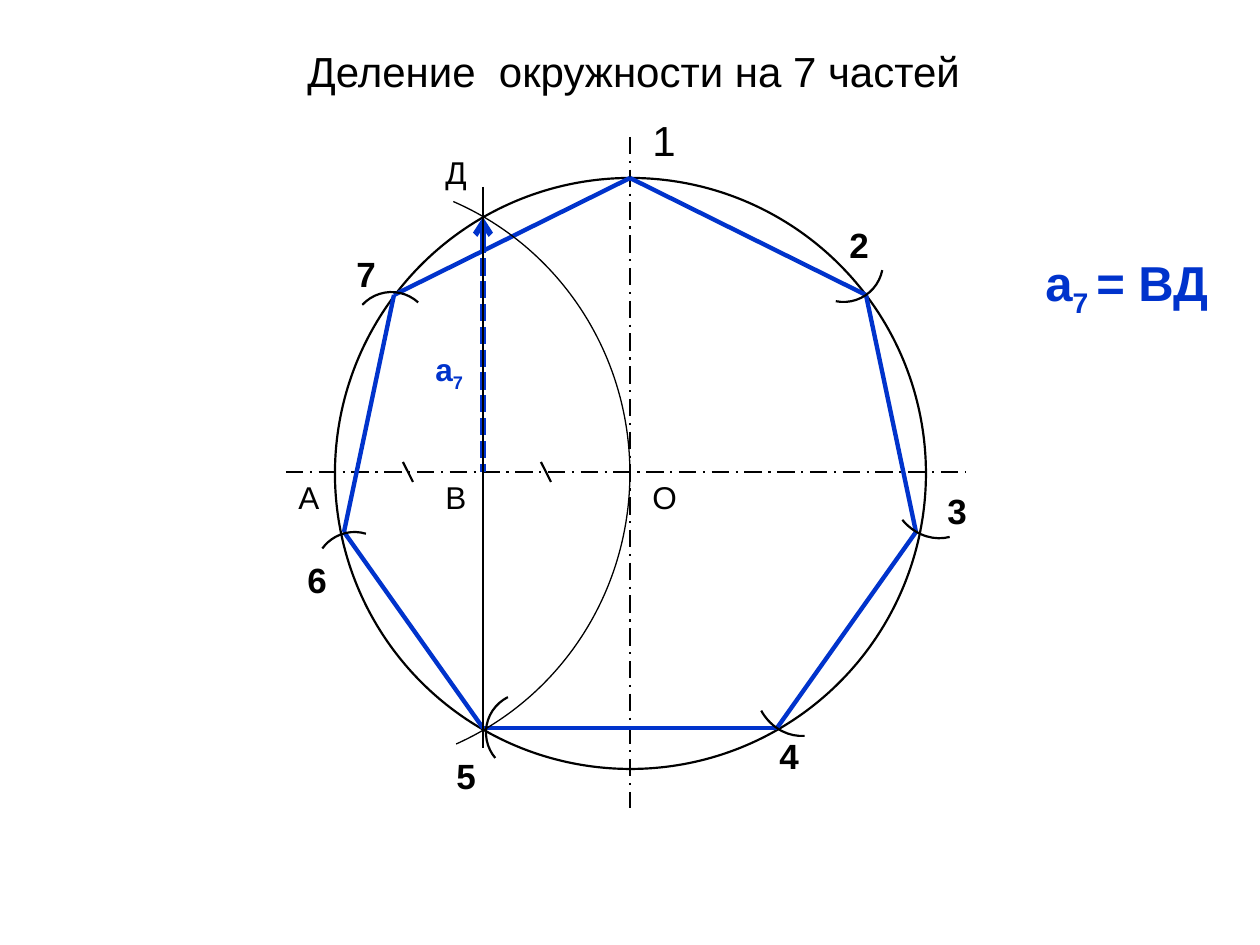
"""Draw the division of a circle into seven equal parts."""
from dataclasses import dataclass

import pptx
import pptx.util
from pptx.dml.color import RGBColor
from pptx.enum.dml import MSO_LINE
from pptx.enum.shapes import MSO_CONNECTOR, MSO_SHAPE
from pptx.enum.text import MSO_AUTO_SIZE
from pptx.oxml.ns import qn
from lxml import etree

BLACK = RGBColor(0x00, 0x00, 0x00)
BLUE = RGBColor(0x00, 0x33, 0xCC)
SCALE = 914400 / 126
FONT = "Arial"


@dataclass
class Label:
    text: str
    left: int
    top: int
    width: int
    height: int
    size: int = 20
    bold: bool = True
    color: RGBColor = BLACK
    sub: str = ""
    tail: str = ""
    wrap: bool = True


@dataclass
class Line:
    start: tuple[int, int]
    end: tuple[int, int]
    width: float = 1.25
    color: RGBColor = BLACK
    dash: MSO_LINE | None = None
    arrow: bool = False


@dataclass
class Arc:
    left: int
    top: int
    width: int
    height: int
    turn: float = 0
    start: float = 270
    end: float = 0
    line: float = 1.25


POINTS = [(630, 178), (866, 295), (916, 532), (777, 728),
          (483, 728), (344, 532), (394, 295)]

LABELS = [
    Label("Деление  окружности на 7 частей", 295, 39, 748, 63, 24, False),
    Label("1", 640, 108, 49, 63, 24, False),
    Label("2", 837, 217, 49, 55),
    Label("3", 935, 483, 39, 55),
    Label("4", 767, 728, 49, 55),
    Label("5", 444, 748, 49, 55),
    Label("6", 295, 552, 39, 55),
    Label("7", 344, 246, 49, 55),
    Label("О", 640, 472, 49, 50, 18, False),
    Label("А", 286, 472, 39, 50, 18, False),
    Label("В", 433, 472, 39, 50, 18, False),
    Label("Д", 433, 147, 59, 50, 18, False),
    Label("а", 1033, 246, 194, 72, 28, color=BLUE, sub="7 ", tail="= ВД", wrap=False),
    Label("а", 423, 344, 55, 50, 18, color=BLUE, sub="7", wrap=False),
]

AXES = [
    Line((630, 137), (630, 808), dash=MSO_LINE.LONG_DASH_DOT),
    Line((286, 472), (965, 472), dash=MSO_LINE.LONG_DASH_DOT),
]
TICKS = [Line((x, 462), (x + 10, 482)) for x in (403, 541)]
RADIUS = Line((483, 217), (483, 472), 3.25, BLUE, MSO_LINE.SQUARE_DOT, True)
SIDES = [Line(a, b, 2.5, BLUE) for a, b in zip(POINTS, POINTS[1:] + POINTS[:1])]
CHORD = Line((483, 187), (483, 748), 0.75)

ARCS = [
    Arc(804, 223, 79, 79, 101.2),
    Arc(893, 447, 84, 93, 141.1, 290.33),
    Arc(756, 644, 84, 93, 151.3, 290.33),
    Arc(486, 693, 79, 79, 243.6, 256.25),
    Arc(315, 532, 79, 79, 286.9, 288.68),
    Arc(352, 292, 79, 79, 312.5),
    Arc(49, 178, 581, 591, 0, 292.73, 66.67, 0.75),
]


def px(*vals: int) -> list[pptx.util.Emu]:
    return [pptx.util.Emu(round(val * SCALE)) for val in vals]


def apply(item, form: dict) -> None:
    for name, val in form.items():
        setattr(item, name, val)


def stroke(shape, width: float, color: RGBColor = BLACK) -> None:
    shape.line.color.rgb = color
    shape.line.width = pptx.util.Pt(width)


def draw_line(slide, line: Line) -> None:
    shape = slide.shapes.add_connector(MSO_CONNECTOR.STRAIGHT, *px(*line.start, *line.end))
    stroke(shape, line.width, line.color)
    if line.dash is not None:
        shape.line.dash_style = line.dash
    props = shape.element.spPr
    if line.arrow:
        etree.SubElement(props.find(qn("a:ln")), qn("a:headEnd"), type="arrow")
    etree.SubElement(props, qn("a:effectLst"))


def draw_round(slide, kind: MSO_SHAPE, box: tuple[int, ...], width: float):
    shape = slide.shapes.add_shape(kind, *px(*box))
    shape.shadow.inherit = False
    shape.fill.background()
    stroke(shape, width)
    return shape


def draw_arc(slide, arc: Arc) -> None:
    box = (arc.left, arc.top, arc.width, arc.height)
    shape = draw_round(slide, MSO_SHAPE.ARC, box, arc.line)
    shape.rotation = arc.turn
    shape.adjustments[0] = arc.start * 0.6
    shape.adjustments[1] = arc.end * 0.6


def draw_label(slide, label: Label) -> None:
    box = slide.shapes.add_textbox(*px(label.left, label.top, label.width, label.height))
    apply(box.text_frame, {"word_wrap": label.wrap,
                           "auto_size": MSO_AUTO_SIZE.SHAPE_TO_FIT_TEXT})
    form = {"name": FONT, "size": pptx.util.Pt(label.size), "bold": label.bold}
    para = box.text_frame.paragraphs[0]
    for text, base in ((label.text, 0), (label.sub, -25000), (label.tail, 0)):
        if text:
            run = para.add_run()
            run.text = text
            apply(run.font, form)
            run.font.color.rgb = label.color
            if base:
                run._r.get_or_add_rPr().set("baseline", str(base))


def main() -> None:
    deck = pptx.Presentation()
    apply(deck, dict(zip(("slide_width", "slide_height"), px(1260, 945))))
    slide = deck.slides.add_slide(deck.slide_layouts[6])
    draw_round(slide, MSO_SHAPE.OVAL, (335, 178, 591, 591), 1.25)
    for line in [*AXES, *TICKS, RADIUS, *SIDES]:
        draw_line(slide, line)
    for arc in ARCS:
        draw_arc(slide, arc)
    draw_line(slide, CHORD)
    for label in LABELS:
        draw_label(slide, label)
    deck.save("out.pptx")


if __name__ == "__main__":
    main()
